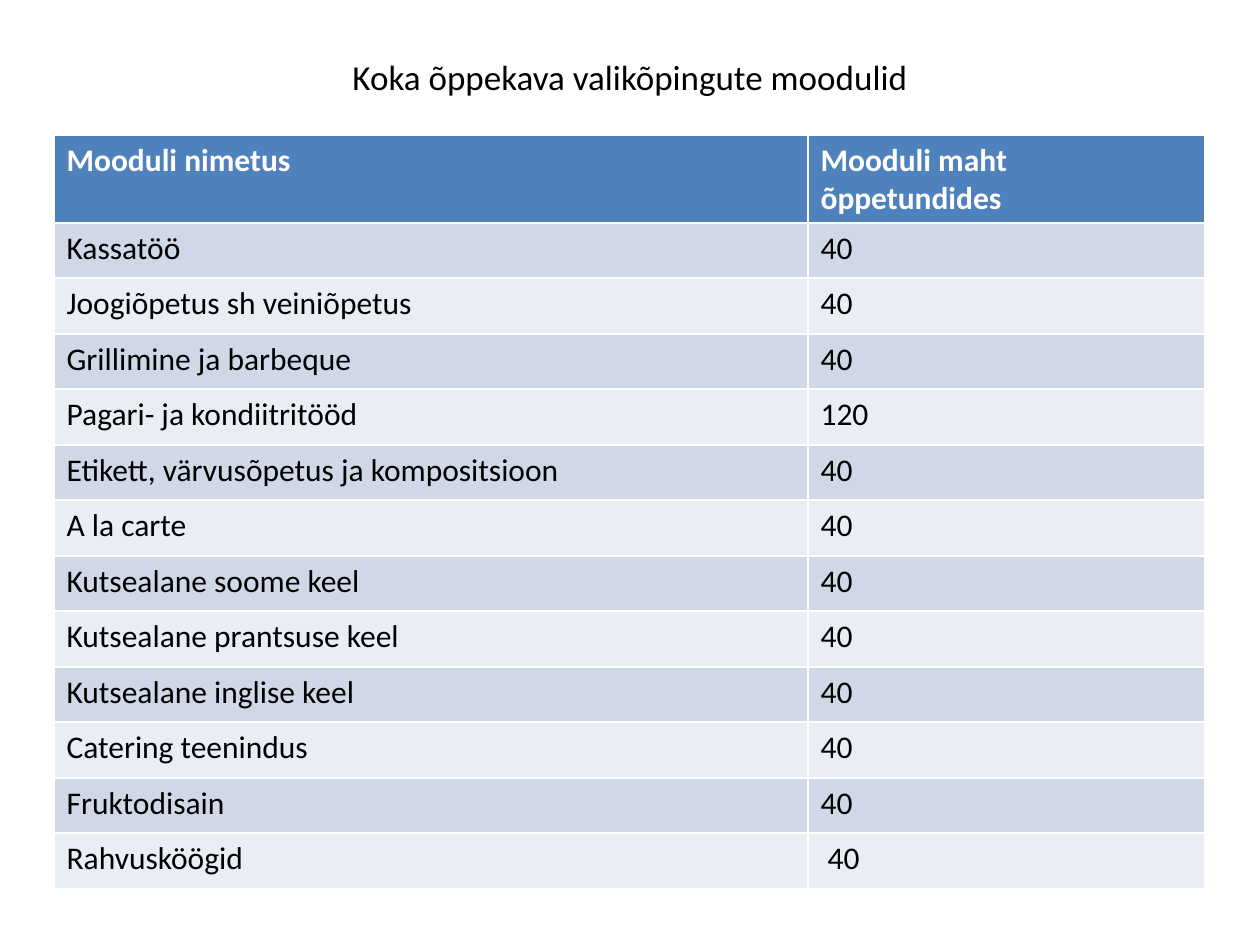
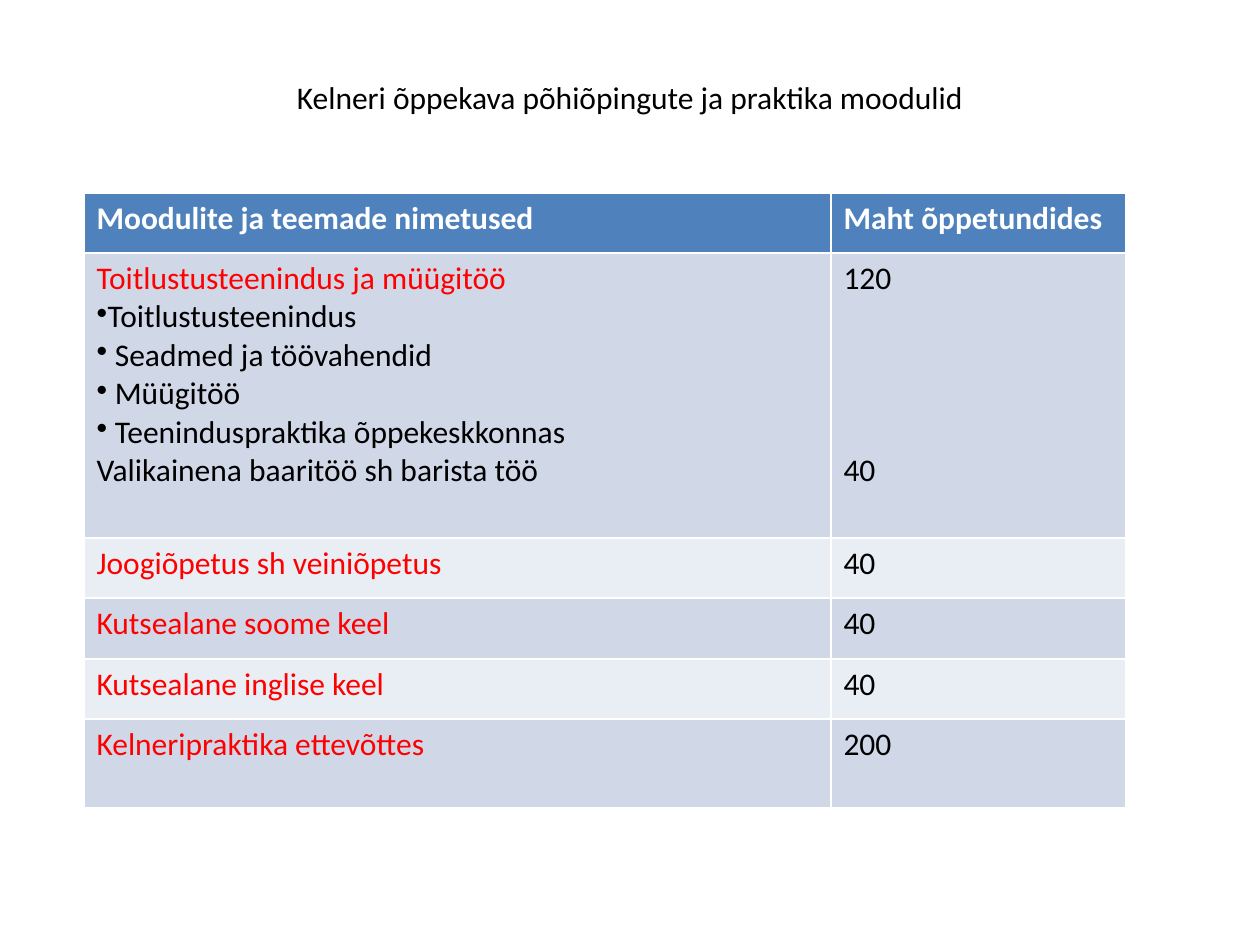
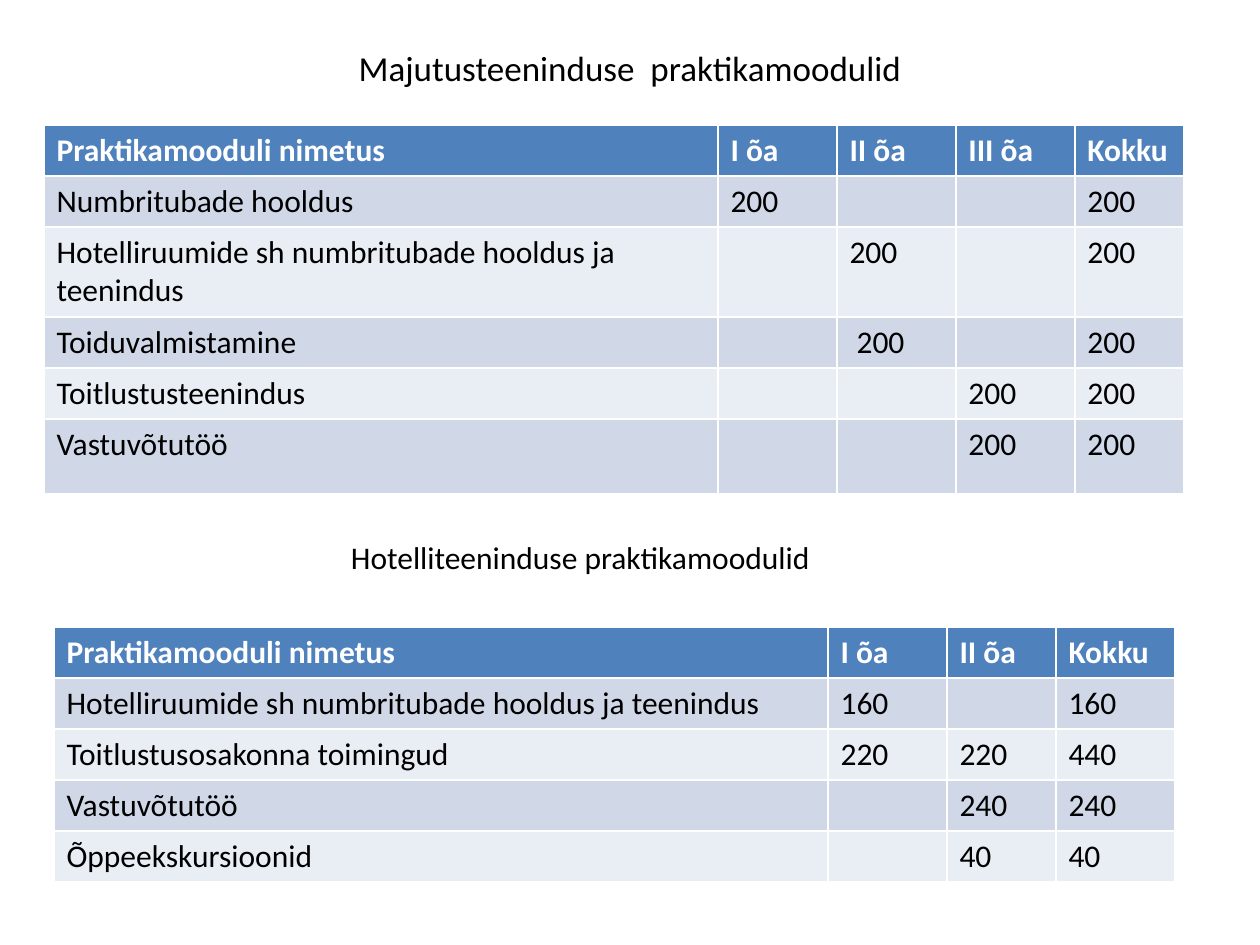
from lxml import etree
from pptx import Presentation
from pptx.dml.color import RGBColor
from pptx.enum.text import MSO_ANCHOR, PP_ALIGN
from pptx.oxml.ns import qn
from pptx.util import Emu, Pt

CENTER = PP_ALIGN.CENTER
TOP, MIDDLE = MSO_ANCHOR.TOP, MSO_ANCHOR.MIDDLE

# Shared style
EMU_PER_PX = 914400 / 126
FONT = "Calibri"
BODY_SIZE = 18
LINE_HEIGHT = 22
BULLET = "•"
WHITE, BLACK, RED = "FFFFFF", "000000", "FF0000"
HEADER_FILL = "4F81BD"
BAND_FILLS = ("D0D8E8", "E9EDF4")


def px(length):
    return Emu(round(length * EMU_PER_PX))


def rgb(value):
    return RGBColor.from_string(value)


class Deck:
    """Holds the presentation, its style and the current slide."""

    def __init__(self):
        self.presentation = Presentation()
        self.presentation.slide_width = px(1260)
        self.presentation.slide_height = px(945)
        self.slide = None

    def new_slide(self):
        blank = self.presentation.slide_layouts[6]
        self.slide = self.presentation.slides.add_slide(blank)

    def style(self, paragraph, size=BODY_SIZE, color=BLACK, bold=False):
        font = paragraph.font
        font.name, font.size, font.bold = FONT, Pt(size), bold
        font.color.rgb = rgb(color)

    def bullet(self, paragraph):
        properties = paragraph._p.get_or_add_pPr()
        properties.set("marL", "0")
        properties.set("indent", "0")
        mark = etree.Element(qn("a:buChar"), char=BULLET)
        properties.insert(0, mark)

    def heading(self, text, left, top, width, height, size=BODY_SIZE, anchor=MIDDLE):
        box = self.slide.shapes.add_textbox(px(left), px(top), px(width), px(height))
        frame = box.text_frame
        frame.word_wrap = True
        frame.vertical_anchor = anchor
        paragraph = frame.paragraphs[0]
        paragraph.text = text
        paragraph.alignment = CENTER
        self.style(paragraph, size)

    def title(self, text, height, size):
        self.heading(text, 63, 38, 1134, height, size)

    def cell(self, cell, text, fill, color, lead_color, bold):
        cell.fill.solid()
        cell.fill.fore_color.rgb = rgb(fill)
        lines = text.split("\n")
        cell.text = "\n".join(line.removeprefix(BULLET) for line in lines)
        for index, (line, paragraph) in enumerate(zip(lines, cell.text_frame.paragraphs)):
            self.style(paragraph, color=color if index else lead_color, bold=bold)
            if line.startswith(BULLET):
                self.bullet(paragraph)

    def table(self, left, top, widths, heights, rows, topic_color=BLACK):
        table = self.slide.shapes.add_table(
            len(rows), len(widths), px(left), px(top), px(sum(widths)), px(sum(heights))
        ).table
        for column, width in zip(table.columns, widths):
            column.width = px(width)
        for r, (row, height) in enumerate(zip(rows, heights)):
            table.rows[r].height = px(height)
            fill = BAND_FILLS[(r - 1) % 2] if r else HEADER_FILL
            color = BLACK if r else WHITE
            for c, text in enumerate(row):
                lead_color = topic_color if r and c == 0 else color
                self.cell(table.cell(r, c), text, fill, color, lead_color, bold=r == 0)
        return table


def cook_electives(deck):
    deck.new_slide()
    deck.title("Koka õppekava valikõpingute moodulid", 77, 20)
    deck.table(54, 135, (754, 397), [88] + [55, 56] * 6, [
        ("Mooduli nimetus", "Mooduli maht õppetundides"),
        ("Kassatöö", "40"),
        ("Joogiõpetus sh veiniõpetus", "40"),
        ("Grillimine ja barbeque", "40"),
        ("Pagari- ja kondiitritööd", "120"),
        ("Etikett, värvusõpetus ja kompositsioon", "40"),
        ("A la carte", "40"),
        ("Kutsealane soome keel", "40"),
        ("Kutsealane prantsuse keel", "40"),
        ("Kutsealane inglise keel", "40"),
        ("Catering teenindus", "40"),
        ("Fruktodisain", "40"),
        ("Rahvusköögid", " 40"),
    ])


def waiter_modules(deck):
    deck.new_slide()
    deck.title("Kelneri õppekava põhiõpingute ja praktika moodulid", 117, 18)
    service = "\n".join((
        "Toitlustusteenindus ja müügitöö",
        "•Toitlustusteenindus",
        "• Seadmed ja töövahendid",
        "• Müügitöö",
        "• Teeninduspraktika õppekeskkonnas",
        "Valikainena baaritöö sh barista töö",
    ))
    modules = deck.table(84, 193, (747, 295), (60, 285, 60, 61, 60, 89), [
        ("Moodulite ja teemade nimetused", "Maht õppetundides"),
        (service, "120\n40"),
        ("Joogiõpetus sh veiniõpetus", "40"),
        ("Kutsealane soome keel", "40"),
        ("Kutsealane inglise keel", "40"),
        ("Kelneripraktika ettevõttes", "200"),
    ], topic_color=RED)
    # Bar work hours line up with the topic below the four bullets
    bar_hours = modules.cell(1, 1).text_frame.paragraphs[1]
    bar_hours.space_before = Pt(4 * LINE_HEIGHT)


def hospitality_practice(deck):
    deck.new_slide()
    deck.title("Majutusteeninduse  praktikamoodulid", 58, 20)
    deck.table(44, 125, (674, 119, 119, 119, 109), (51, 51, 90, 51, 51, 75), [
        ("Praktikamooduli nimetus", "I õa", "II õa", "III õa", "Kokku"),
        ("Numbritubade hooldus", "200", "", "", "200"),
        ("Hotelliruumide sh numbritubade hooldus ja teenindus", "", "200", "", "200"),
        ("Toiduvalmistamine", "", " 200", "", "200"),
        ("Toitlustusteenindus", "", "", "200", "200"),
        ("Vastuvõtutöö", "", "", "200", "200"),
    ])
    deck.table(54, 627, (774, 119, 109, 119), [51] * 5, [
        ("Praktikamooduli nimetus", "I õa", "II õa", "Kokku"),
        ("Hotelliruumide sh numbritubade hooldus ja teenindus", "160", "", "160"),
        ("Toitlustusosakonna toimingud", "220", "220", "440"),
        ("Vastuvõtutöö", "", "240", "240"),
        ("Õppeekskursioonid", "", "40", "40"),
    ])
    deck.heading("Hotelliteeninduse praktikamoodulid", 94, 532, 973, 50, anchor=TOP)


def main():
    deck = Deck()
    cook_electives(deck)
    waiter_modules(deck)
    hospitality_practice(deck)
    deck.presentation.save("out.pptx")


if __name__ == "__main__":
    main()
